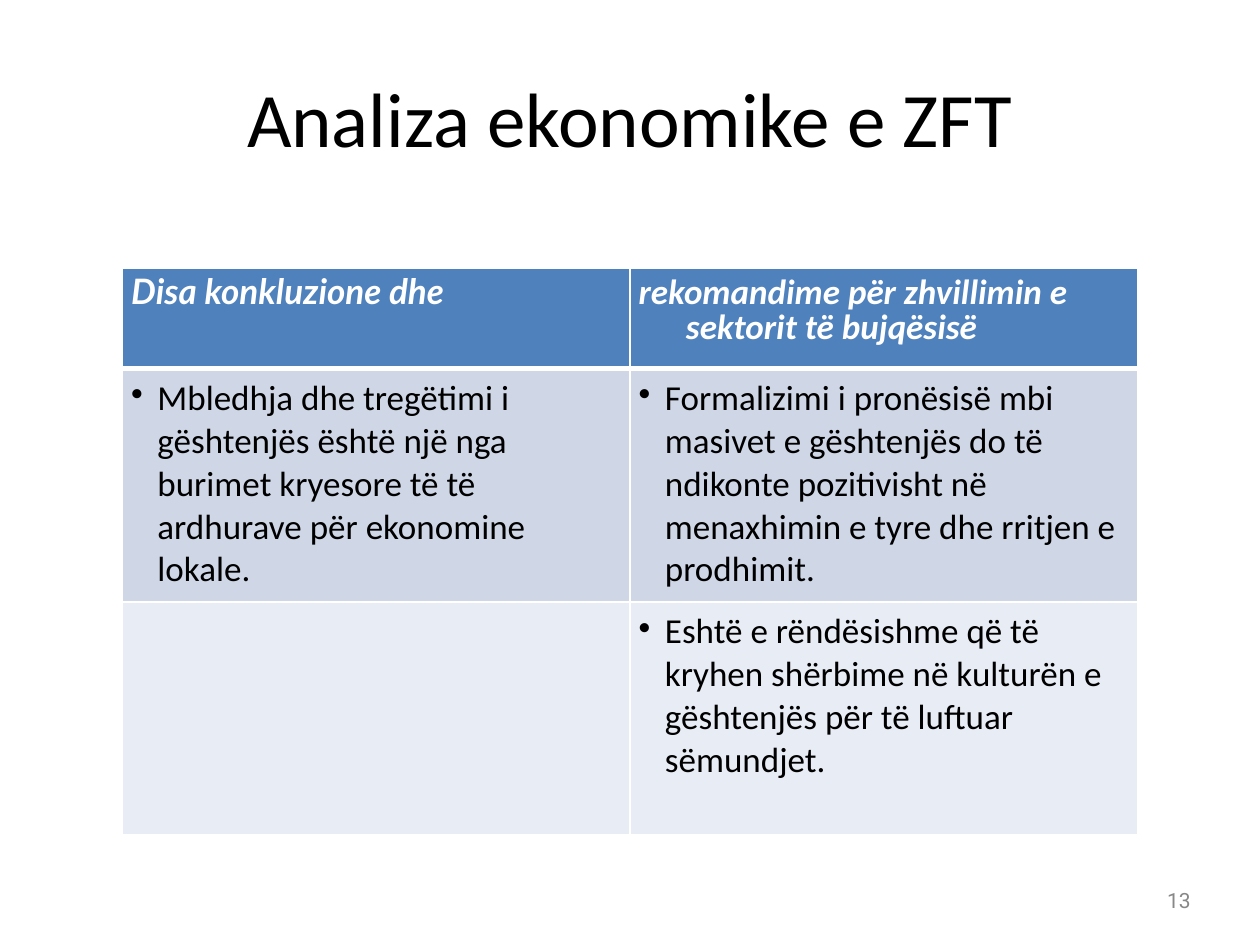
from lxml.etree import SubElement
from pptx import Presentation
from pptx.dml.color import RGBColor
from pptx.enum.text import MSO_ANCHOR as Anchor, PP_ALIGN as Align
from pptx.oxml import parse_xml
from pptx.oxml.ns import nsdecls, qn
from pptx.util import Pt

COLORS = {
    "white": "FFFFFF",
    "black": "000000",
    "gray": "888888",
    "header": "4F81BD",
    "band_dark": "CFD7E7",
    "band_light": "E8ECF4",
}


def style(paragraph, font_name, size, color):
    paragraph.font.name = font_name
    paragraph.font.size = Pt(size)
    paragraph.font.color.rgb = RGBColor.from_string(COLORS[color])


def add_label(slide, box, text, align, font_name, size, color):
    shape = slide.shapes.add_textbox(*[Pt(value) for value in box])
    frame = shape.text_frame
    frame.word_wrap = True
    frame.vertical_anchor = Anchor.MIDDLE
    frame.margin_left = frame.margin_right = Pt(3.6)
    frame.margin_top = frame.margin_bottom = Pt(3.6)
    paragraph = frame.paragraphs[0]
    paragraph.text = text
    paragraph.alignment = align
    style(paragraph, font_name, size, color)


presentation = Presentation()
presentation.slide_width = Pt(720)
presentation.slide_height = Pt(540)
slide = presentation.slides.add_slide(presentation.slide_layouts[6])

add_label(slide, (36, 7.2, 648, 118.8), "Analiza ekonomike e ZFT",
          Align.CENTER, "Calibri", 44, "black")
add_label(slide, (516, 504, 168, 21), "13", Align.RIGHT, "Roboto", 12, "gray")

rows = [
    ("Disa konkluzione dhe",
     "rekomandime për zhvillimin e sektorit të bujqësisë"),
    ("Mbledhja dhe tregëtimi i gështenjës është një nga burimet kryesore të të "
     "ardhurave për ekonomine lokale.",
     "Formalizimi i pronësisë mbi masivet e gështenjës do të ndikonte "
     "pozitivisht në menaxhimin e tyre dhe rritjen e prodhimit."),
    ("",
     "Eshtë e rëndësishme që të kryhen shërbime në kulturën e gështenjës "
     "për të luftuar sëmundjet."),
]
row_heights = [57, 133.4, 133.4]
row_fills = ["header", "band_dark", "band_light"]

table = slide.shapes.add_table(
    3, 2, Pt(70), Pt(153.5), Pt(580), Pt(sum(row_heights))).table
for column in table.columns:
    column.width = Pt(290)

for row_index, texts in enumerate(rows):
    is_header = row_index == 0
    table.rows[row_index].height = Pt(row_heights[row_index])
    for column_index, text in enumerate(texts):
        cell = table.cell(row_index, column_index)
        cell.fill.solid()
        cell.fill.fore_color.rgb = RGBColor.from_string(COLORS[row_fills[row_index]])
        cell.margin_left = cell.margin_right = Pt(5)
        cell.margin_top = cell.margin_bottom = Pt(5)

        widths = {"lnL": 1, "lnR": 1,
                  "lnT": 3 if row_index == 1 else 1,
                  "lnB": 3 if is_header else 1}
        for position, (side, width) in enumerate(widths.items()):
            border = parse_xml(
                f'<a:{side} {nsdecls("a")} w="{Pt(width)}"><a:solidFill>'
                f'<a:srgbClr val="{COLORS["white"]}"/></a:solidFill></a:{side}>')
            cell._tc.get_or_add_tcPr().insert(position, border)

        paragraph = cell.text_frame.paragraphs[0]
        paragraph.text = text
        is_first = is_header and column_index == 0
        style(paragraph, "Lato" if is_first else "Calibri", 20,
              "white" if is_header else "black")
        paragraph.font.bold = paragraph.font.italic = is_header
        paragraph.space_before = Pt(0 if is_first else 4)
        if is_header:
            paragraph.line_spacing = 0.8
        indent = Pt(27 if is_header else 15)
        properties = paragraph._p.get_or_add_pPr()
        properties.set("marL", str(indent))
        properties.set("indent", str(-indent))
        if text and not is_header:
            bullet = SubElement(properties, qn("a:buChar"))
            bullet.set("char", "•")
            properties.find(qn("a:defRPr")).addprevious(bullet)

presentation.save("out.pptx")
